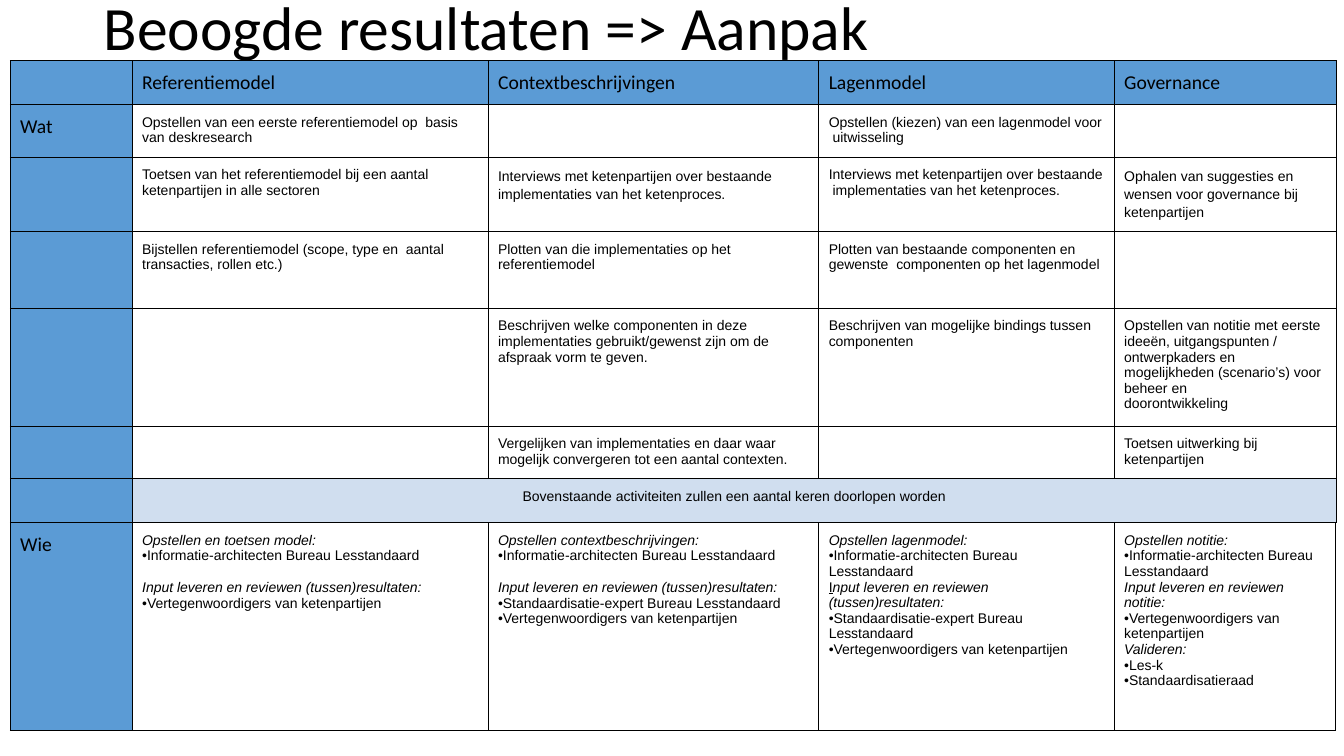
from lxml.etree import SubElement
from pptx import Presentation
from pptx.dml.color import RGBColor
from pptx.enum.text import MSO_ANCHOR as Anchor, MSO_AUTO_SIZE as AutoSize, PP_ALIGN as Align
from pptx.oxml.ns import qn
from pptx.util import Pt

PX = 9144  # 100 px to the inch
BLUE, PALE, WHITE, BLACK = "5B9BD5", "D0DEEF", "FFFFFF", "000000"


def color(hex_string):
    return RGBColor.from_string(hex_string)


def add_border(cell, side, width):
    """Draw one black border; side is L, R, T or B."""
    line = SubElement(cell._tc.get_or_add_tcPr(), qn(f"a:ln{side}"), w=str(Pt(width)))
    fill = SubElement(line, qn("a:solidFill"))
    SubElement(fill, qn("a:srgbClr"), val=BLACK)


COLUMN_WIDTHS = [121, 353, 328, 293, 220]
ROW_HEIGHTS = [42, 52, 74, 76, 117, 52, 42, 206]
CYCLE_ROW, WHO_ROW = 6, 7
LOOSE_CELLS = [(2, 2), (2, 4)]
ARCHITECTS = "•Informatie-architecten Bureau Lesstandaard"
EXPERT = "•Standaardisatie-expert Bureau Lesstandaard"
PARTNERS = "•Vertegenwoordigers van ketenpartijen"
REVIEW = "Input leveren en reviewen (tussen)resultaten:"
LAYER_REVIEW = "Input leveren en reviewen  (tussen)resultaten:"

ROWS = [
    ["", "Referentiemodel", "Contextbeschrijvingen", "Lagenmodel", "Governance"],
    ["Wat",
     "Opstellen van een eerste referentiemodel op  basis van deskresearch",
     "",
     "Opstellen (kiezen) van een lagenmodel voor  uitwisseling",
     ""],
    ["",
     "Toetsen van het referentiemodel bij een aantal  ketenpartijen in alle sectoren",
     "Interviews met ketenpartijen over bestaande implementaties van het ketenproces.",
     "Interviews met ketenpartijen over bestaande  implementaties van het ketenproces.",
     "Ophalen van suggesties en wensen voor governance bij ketenpartijen"],
    ["",
     "Bijstellen referentiemodel (scope, type en  aantal transacties, rollen etc.)",
     "Plotten van die implementaties op het referentiemodel",
     "Plotten van bestaande componenten en gewenste  componenten op het lagenmodel",
     ""],
    ["",
     "",
     "Beschrijven welke componenten in deze  implementaties gebruikt/gewenst zijn "
     "om de afspraak vorm te geven.",
     "Beschrijven van mogelijke bindings tussen componenten",
     "Opstellen van notitie met eerste ideeën, uitgangspunten / ontwerpkaders en "
     "mogelijkheden (scenario’s) voor beheer en\ndoorontwikkeling"],
    ["",
     "",
     "Vergelijken van implementaties en daar waar  mogelijk convergeren tot een aantal contexten.",
     "",
     "Toetsen uitwerking bij ketenpartijen"],
    ["", "Bovenstaande activiteiten zullen een aantal keren doorlopen worden", "", "", ""],
    ["Wie",
     "\n".join(["Opstellen en toetsen model:", ARCHITECTS, REVIEW, PARTNERS]),
     "\n".join(["Opstellen contextbeschrijvingen:", ARCHITECTS, REVIEW, EXPERT, PARTNERS]),
     "\n".join(["Opstellen lagenmodel:", ARCHITECTS, LAYER_REVIEW, EXPERT, PARTNERS]),
     "\n".join(["Opstellen notitie:", ARCHITECTS, "Input leveren en reviewen notitie:",
                PARTNERS, "Valideren:", "•Les-k", "•Standaardisatieraad"])],
]

presentation = Presentation()
presentation.slide_width, presentation.slide_height = 1333 * PX, 750 * PX
slide = presentation.slides.add_slide(presentation.slide_layouts[5])

table = slide.shapes.add_table(
    len(ROW_HEIGHTS), len(COLUMN_WIDTHS), 10 * PX, 60 * PX,
    sum(COLUMN_WIDTHS) * PX, sum(ROW_HEIGHTS) * PX).table
table.first_row = table.horz_banding = False
for column, width in zip(table.columns, COLUMN_WIDTHS):
    column.width = width * PX
for row, height in zip(table.rows, ROW_HEIGHTS):
    row.height = height * PX
table.cell(CYCLE_ROW, 1).merge(table.cell(CYCLE_ROW, 4))

for row_index, texts in enumerate(ROWS):
    for column_index, text in enumerate(texts):
        cell = table.cell(row_index, column_index)
        is_heading = row_index == 0 or column_index == 0
        size, font_name = (14, "Calibri") if is_heading else (10, "Arial")
        cell.margin_left = cell.margin_right = cell.margin_top = cell.margin_bottom = 10 * PX
        for side in "LRTB":
            thick = row_index == WHO_ROW and (column_index == 4 or (column_index, side) == (3, "R"))
            add_border(cell, side, 0.75 if thick else 0.5)
        cell.fill.solid()
        body_color = PALE if row_index == CYCLE_ROW else WHITE
        cell.fill.fore_color.rgb = color(BLUE if is_heading else body_color)

        for line_index, line in enumerate(text.split("\n")):
            frame = cell.text_frame
            paragraph = frame.add_paragraph() if line_index else frame.paragraphs[0]
            if row_index == CYCLE_ROW:
                paragraph.alignment = Align.CENTER
            if (row_index, column_index) in LOOSE_CELLS:
                paragraph.line_spacing = 1.15
            if line == REVIEW:
                paragraph.space_before = Pt(11.5)
            if not line:
                SubElement(paragraph._p, qn("a:endParaRPr"), sz=str(size * 100))
                continue
            is_label = line.endswith(":")
            parts = [line[:1], line[1:]] if line == LAYER_REVIEW else [line]
            for part in parts:
                run = paragraph.add_run()
                run.text = part
                run.font.name, run.font.size = font_name, Pt(size)
                run.font.color.rgb = color(BLACK)
                run.font.bold = False
                run.font.italic = is_label and part != "I"
                run.font.underline = part == "I"

title = slide.shapes.title
title.left, title.top, title.width, title.height = 93 * PX, 0, 1150 * PX, 60 * PX
frame = title.text_frame
frame.auto_size = AutoSize.NONE
frame.word_wrap = True
frame.vertical_anchor = Anchor.MIDDLE
frame.margin_left = frame.margin_right = 10 * PX
frame.margin_top = frame.margin_bottom = 5 * PX
paragraph = frame.paragraphs[0]
paragraph.alignment = Align.LEFT
paragraph.line_spacing = 0.9
run = paragraph.add_run()
run.text = "Beoogde resultaten => Aanpak"
run.font.name, run.font.size = "Calibri", Pt(44)
run.font.color.rgb = color(BLACK)

presentation.save("out.pptx")
